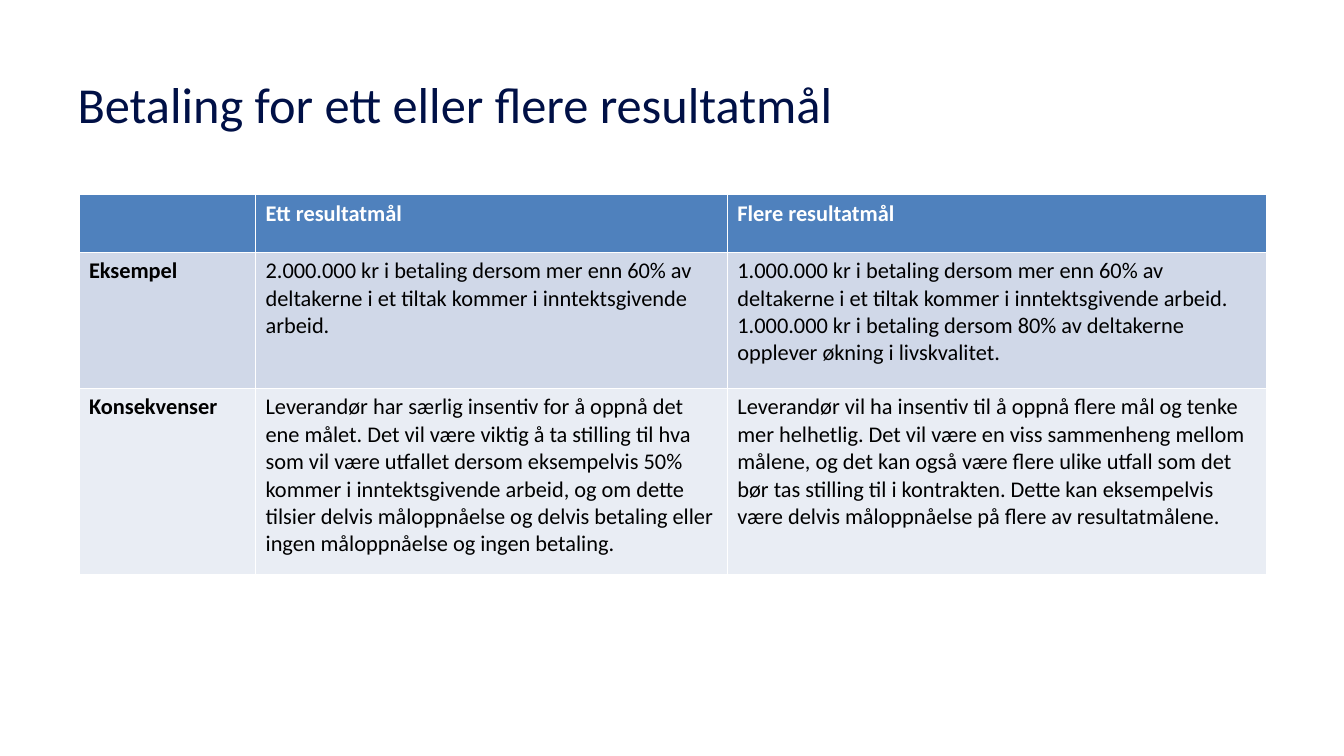
import pptx
import pptx.util
import pptx.dml.color
import pptx.enum.text

Cm = pptx.util.Cm
Pt = pptx.util.Pt
RGBColor = pptx.dml.color.RGBColor

NAVY = RGBColor(0x00, 0x10, 0x46)
BLUE = RGBColor(0x4F, 0x81, 0xBD)
BAND_DARK = RGBColor(0xD0, 0xD8, 0xE8)
BAND_LIGHT = RGBColor(0xE9, 0xED, 0xF4)
WHITE = RGBColor(0xFF, 0xFF, 0xFF)
BLACK = RGBColor(0x00, 0x00, 0x00)
FONT = "Calibri"

COL_WIDTHS = [4.45, 11.89, 13.58]
ROW_HEIGHTS = [1.45, 3.43, 4.7]
ROW_FILLS = [BLUE, BAND_DARK, BAND_LIGHT]
ROWS = [
    ["", "Ett resultatmål", "Flere resultatmål"],
    ["Eksempel",
     "2.000.000 kr i betaling dersom mer enn 60% av deltakerne i et tiltak "
     "kommer i inntektsgivende arbeid.",
     "1.000.000 kr i betaling dersom mer enn 60% av deltakerne i et tiltak "
     "kommer i inntektsgivende arbeid. 1.000.000 kr i betaling dersom 80% av "
     "deltakerne opplever økning i livskvalitet."],
    ["Konsekvenser",
     "Leverandør har særlig insentiv for å oppnå det ene målet. Det vil være "
     "viktig å ta stilling til hva som vil være utfallet dersom eksempelvis 50% "
     "kommer i inntektsgivende arbeid, og om dette tilsier delvis måloppnåelse "
     "og delvis betaling eller ingen måloppnåelse og ingen betaling.",
     "Leverandør vil ha insentiv til å oppnå flere mål og tenke mer helhetlig. "
     "Det vil være en viss sammenheng mellom målene, og det kan også være flere "
     "ulike utfall som det bør tas stilling til i kontrakten. Dette kan "
     "eksempelvis være delvis måloppnåelse på flere av resultatmålene."],
]


def style_font(font, size, color, bold=False):
    font.name = FONT
    font.size = Pt(size)
    font.bold = bold
    font.color.rgb = color


prs = pptx.Presentation()
prs.slide_width = Cm(33.87)
prs.slide_height = Cm(19.05)
slide = prs.slides.add_slide(prs.slide_layouts[5])

title = slide.shapes.title
title.left, title.top, title.width, title.height = Cm(1.7), Cm(1.02), Cm(30.48), Cm(3.15)
tf = title.text_frame
tf.text = "Betaling for ett eller flere resultatmål"
tf.vertical_anchor = pptx.enum.text.MSO_ANCHOR.MIDDLE
p = tf.paragraphs[0]
p.alignment = pptx.enum.text.PP_ALIGN.LEFT
style_font(p.runs[0].font, 36, NAVY)

# The default table style supplies the white cell borders.
table = slide.shapes.add_table(
    len(ROWS), len(COL_WIDTHS), Cm(1.99), Cm(4.91),
    Cm(sum(COL_WIDTHS)), Cm(sum(ROW_HEIGHTS))).table
for column, width in zip(table.columns, COL_WIDTHS):
    column.width = Cm(width)
for row, height in zip(table.rows, ROW_HEIGHTS):
    row.height = Cm(height)

for i, texts in enumerate(ROWS):
    for j, text in enumerate(texts):
        cell = table.cell(i, j)
        cell.fill.solid()
        cell.fill.fore_color.rgb = ROW_FILLS[i]
        cell.text_frame.text = text
        for r in cell.text_frame.paragraphs[0].runs:
            style_font(r.font, 16, WHITE if i == 0 else BLACK, bold=i == 0 or j == 0)

prs.save("out.pptx")
